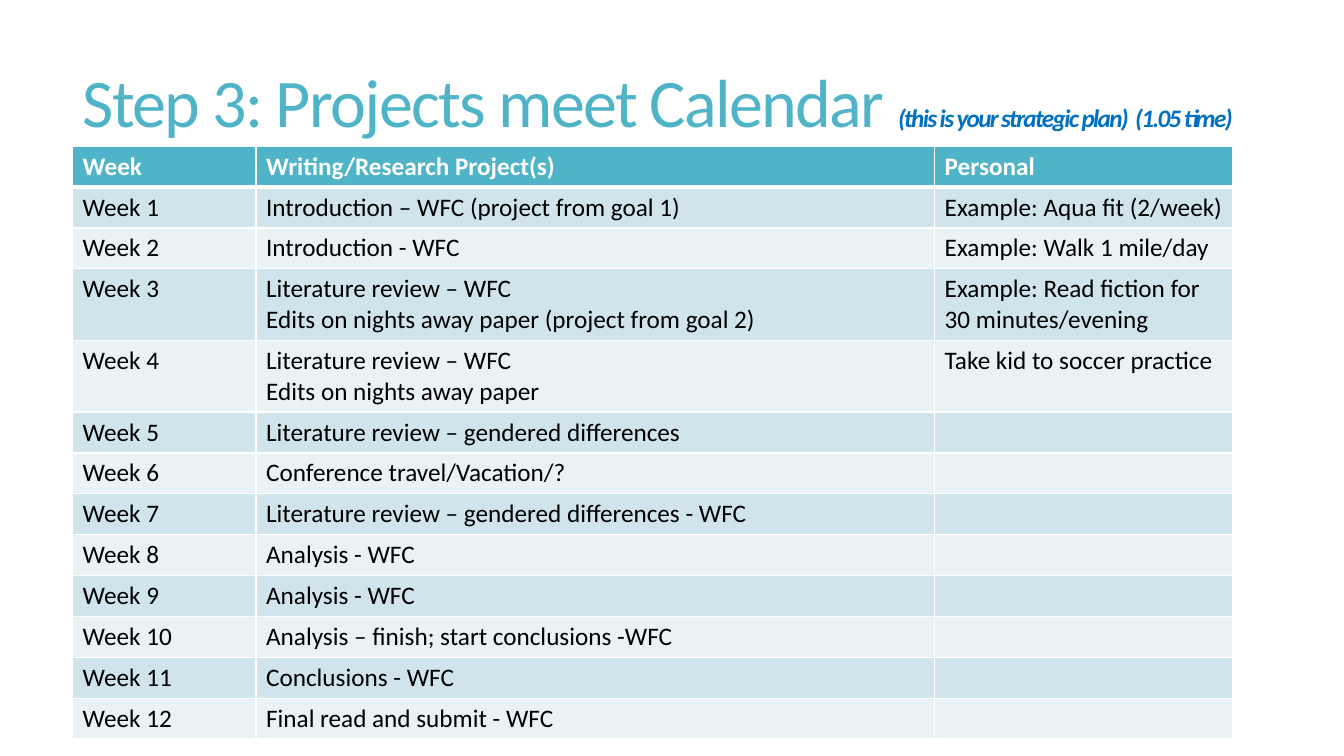
from lxml import etree
from pptx import Presentation
from pptx.dml.color import RGBColor
from pptx.enum import text
from pptx.oxml import ns
from pptx.util import Inches, Pt

TITLE = "Step 3: Projects meet Calendar "
SUBTITLE = "(this is your strategic plan)  (1.05 time)"
HEADER = ("Week", "Writing/Research Project(s)", "Personal")
WEEKS = [
    ("Introduction – WFC (project from goal 1)", "Example: Aqua fit (2/week)"),
    ("Introduction - WFC", "Example: Walk 1 mile/day"),
    ("Literature review – WFC\nEdits on nights away paper (project from goal 2)",
     "Example: Read fiction for 30 minutes/evening"),
    ("Literature review – WFC\nEdits on nights away paper", "Take kid to soccer practice"),
    ("Literature review – gendered differences", ""),
    ("Conference travel/Vacation/?", ""),
    ("Literature review – gendered differences - WFC", ""),
    ("Analysis - WFC", ""),
    ("Analysis - WFC", ""),
    ("Analysis – finish; start conclusions -WFC", ""),
    ("Conclusions - WFC", ""),
    ("Final read and submit - WFC", ""),
]
COLORS = {"teal": "50B4C8", "blue": "0070C0", "white": "FFFFFF", "black": "000000",
          "dark band": "D0E5EB", "light band": "E9F2F5"}
FONT = "Calibri"
LEFT = Inches(0.72)
TABLE_TOP, TABLE_HEIGHT = Inches(1.45), Inches(5.86)
COLUMN_WIDTHS = [Inches(width) for width in (1.82, 6.73, 2.96)]
ROW_HEIGHT = Pt(29.2)


def color(name):
    return RGBColor.from_string(COLORS[name])


def style_font(font, size, color_name, bold=False, italic=False):
    font.name, font.size = FONT, Pt(size)
    font.bold, font.italic = bold, italic
    font.color.rgb = color(color_name)


def add_bottom_border(cell, points, color_name):
    """Draw the cell's lower edge; call before the fill is set."""
    properties = cell._tc.get_or_add_tcPr()
    line = etree.SubElement(properties, ns.qn("a:lnB"), w=str(Pt(points)))
    fill = etree.SubElement(line, ns.qn("a:solidFill"))
    etree.SubElement(fill, ns.qn("a:srgbClr"), val=COLORS[color_name])


def add_title(slide):
    title = slide.shapes.title
    title.left, title.top = LEFT, Inches(0.55)
    title.width, title.height = Inches(11.78), Inches(1.02)
    frame = title.text_frame
    frame.auto_size = text.MSO_AUTO_SIZE.NONE
    frame.vertical_anchor = text.MSO_ANCHOR.MIDDLE
    paragraph = frame.paragraphs[0]
    paragraph.alignment = text.PP_ALIGN.LEFT
    paragraph.line_spacing = 0.85
    for wording, style in ((TITLE, (48.6, "teal")), (SUBTITLE, (18, "blue", True, True))):
        run = paragraph.add_run()
        run.text = wording
        style_font(run.font, *style)
        run.font._element.set("spc", "-120")  # letter spacing, 1/100 pt


def add_calendar(slide):
    rows = [HEADER] + [(f"Week {number}", *week) for number, week in enumerate(WEEKS, 1)]
    graphic_frame = slide.shapes.add_table(len(rows), len(HEADER), LEFT, TABLE_TOP,
                                           sum(COLUMN_WIDTHS), TABLE_HEIGHT)
    table = graphic_frame.table
    for column, width in zip(table.columns, COLUMN_WIDTHS):
        column.width = width
    for index, (row, wordings) in enumerate(zip(table.rows, rows)):
        row.height = ROW_HEIGHT
        is_header = index == 0
        fill = "teal" if is_header else "dark band" if index % 2 else "light band"
        for cell, wording in zip(row.cells, wordings):
            cell.text = wording
            if is_header:
                add_bottom_border(cell, 3, "white")
            cell.fill.solid()
            cell.fill.fore_color.rgb = color(fill)
            for paragraph in cell.text_frame.paragraphs:
                style_font(paragraph.font, 18, "white" if is_header else "black", is_header)
    graphic_frame.height = TABLE_HEIGHT


def main():
    presentation = Presentation()
    presentation.slide_width, presentation.slide_height = Inches(13.33), Inches(7.5)
    slide = presentation.slides.add_slide(presentation.slide_layouts[5])
    add_title(slide)
    add_calendar(slide)
    presentation.save("out.pptx")


if __name__ == "__main__":
    main()
